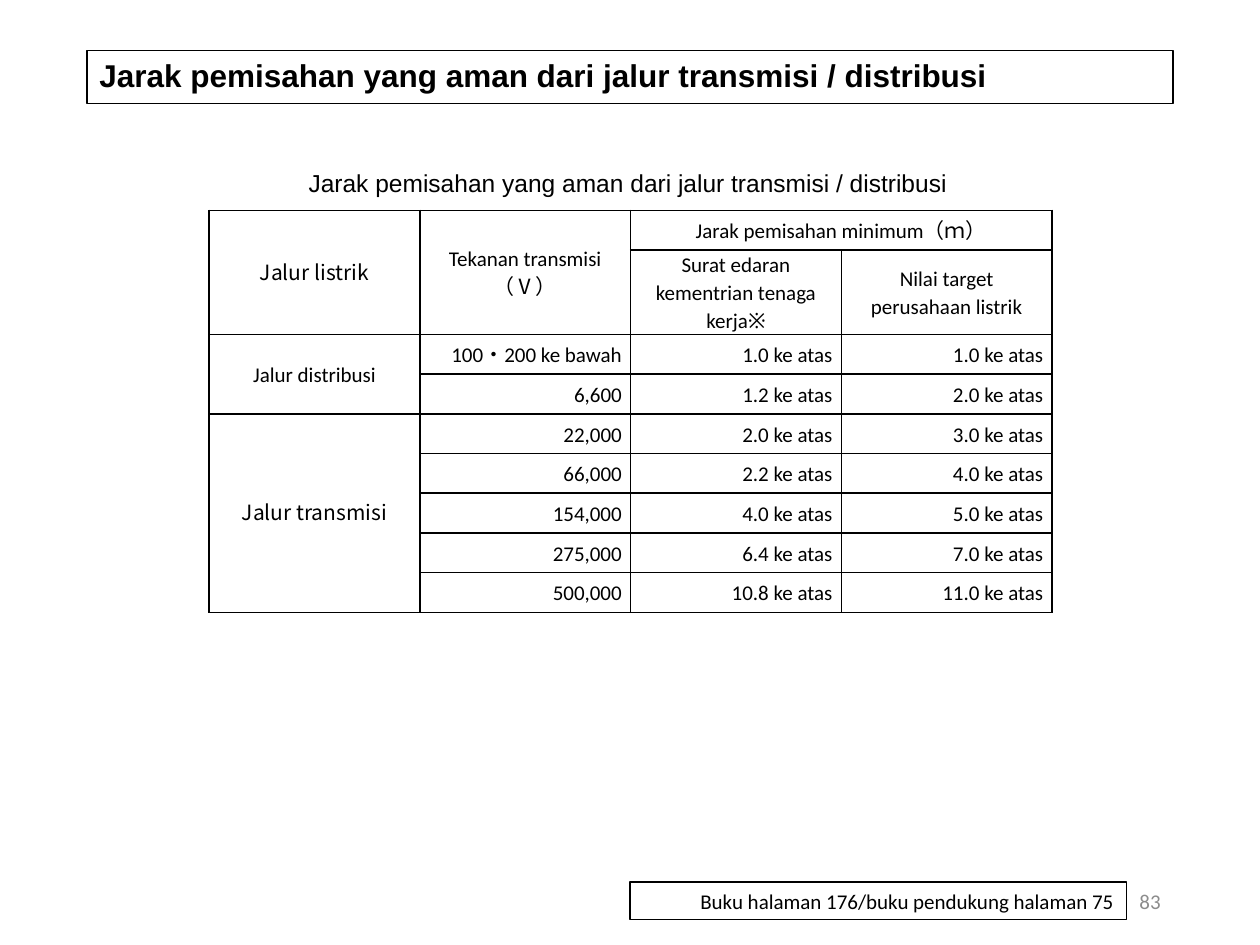
"""Build a slide with a table of safe distances from power lines."""
from lxml import etree
from pptx import Presentation
from pptx import util as u
from pptx.dml.color import RGBColor
from pptx.enum import text as t
from pptx.oxml.ns import qn

COLORS = {"ink": "000000", "number": "8C8C8C"}
HEADING = "Jarak pemisahan yang aman dari jalur transmisi / distribusi"
CJK = "Noto Sans CJK JP"
LEFT, CENTER, RIGHT = t.PP_ALIGN.LEFT, t.PP_ALIGN.CENTER, t.PP_ALIGN.RIGHT

BOXES = [
    {"text": HEADING, "at": (0.69, 0.4, 8.62, 0.42), "size": 18, "font": "Arial",
     "bold": True, "border": True, "spacing": 0.9},
    {"text": "Buku halaman 176/buku pendukung halaman 75", "at": (5, 7, 3.94, 0.3),
     "align": RIGHT, "border": True},
    {"text": "83", "at": (7.06, 6.95, 2.25, 0.4), "align": RIGHT, "color": "number"},
    {"text": HEADING, "at": (2.35, 1.28, 5.29, 0.34), "size": 14, "font": "Arial",
     "wrap": False},
]

ROWS = [
    ("Jalur listrik", "Tekanan transmisi（Ⅴ）", "Jarak pemisahan minimum（ｍ）", ""),
    ("", "", "Surat edaran kementrian tenaga kerja※", "Nilai target perusahaan listrik"),
    ("Jalur distribusi", "100・200 ke bawah", "1.0 ke atas", "1.0 ke atas"),
    ("", "6,600", "1.2 ke atas", "2.0 ke atas"),
    ("Jalur transmisi", "22,000", "2.0 ke atas", "3.0 ke atas"),
    ("", "66,000", "2.2 ke atas", "4.0 ke atas"),
    ("", "154,000", "4.0 ke atas", "5.0 ke atas"),
    ("", "275,000", "6.4 ke atas", "7.0 ke atas"),
    ("", "500,000", "10.8 ke atas", "11.0 ke atas"),
]
MERGES = [((0, 0), (1, 0)), ((0, 1), (1, 1)), ((0, 2), (0, 3)),
          ((2, 0), (3, 0)), ((4, 0), (8, 0))]
CJK_CELLS = {"Jalur listrik", "Jalur transmisi"}
HEADER_ROWS = 2
TABLE_AT = (1.66, 1.67, 6.69, 3.19)
SUBHEADER_HEIGHT = 0.67


def set_all(target, values):
    for name, value in values.items():
        setattr(target, name, value)


def write(paragraph, words, size=12, font="Calibri", color="ink", bold=False,
          align=LEFT, spacing=None):
    run = paragraph.add_run()
    run.text = words
    set_all(run.font, {"size": u.Pt(size), "name": font, "bold": bold})
    run.font.color.rgb = RGBColor.from_string(COLORS[color])
    set_all(paragraph, {"alignment": align, "line_spacing": spacing})


def add_box(slide, box):
    style = dict(box)
    words, at = style.pop("text"), style.pop("at")
    border, wrap = style.pop("border", False), style.pop("wrap", True)
    shape = slide.shapes.add_textbox(*map(u.Inches, at))
    if border:
        shape.line.color.rgb = RGBColor.from_string(COLORS["ink"])
        shape.line.width = u.Pt(0.75)
    set_all(shape.text_frame, {"word_wrap": wrap, "vertical_anchor": t.MSO_ANCHOR.MIDDLE})
    write(shape.text_frame.paragraphs[0], words, **style)


def add_borders(cell):
    properties = cell._tc.get_or_add_tcPr()
    for index, side in enumerate(("lnL", "lnR", "lnT", "lnB")):
        line = etree.Element(qn(f"a:{side}"), w=str(u.Pt(1)))
        fill = etree.SubElement(line, qn("a:solidFill"))
        etree.SubElement(fill, qn("a:srgbClr"), val=COLORS["ink"])
        properties.insert(index, line)


def add_distance_table(slide):
    left, top, width, height = TABLE_AT
    columns = len(ROWS[0])
    table = slide.shapes.add_table(len(ROWS), columns, *map(u.Inches, TABLE_AT)).table
    set_all(table, {"first_row": False, "horz_banding": False})
    for column in table.columns:
        column.width = u.Inches(width / columns)
    for index, row in enumerate(table.rows):
        regular = (height - SUBHEADER_HEIGHT) / (len(ROWS) - 1)
        row.height = u.Inches(SUBHEADER_HEIGHT if index == 1 else regular)
    for start, end in MERGES:
        table.cell(*start).merge(table.cell(*end))
    for row, values in enumerate(ROWS):
        for column, words in enumerate(values):
            cell = table.cell(row, column)
            cell.fill.background()
            add_borders(cell)
            set_all(cell, {"margin_left": u.Inches(0.07), "margin_right": u.Inches(0.07),
                           "margin_top": 0, "margin_bottom": 0,
                           "vertical_anchor": t.MSO_ANCHOR.MIDDLE})
            if words:
                centered = row < HEADER_ROWS or column == 0
                write(cell.text_frame.paragraphs[0], words,
                      font=CJK if words in CJK_CELLS else "Calibri",
                      align=CENTER if centered else RIGHT, spacing=u.Pt(16))


def main():
    presentation = Presentation()
    set_all(presentation, {"slide_width": u.Inches(10), "slide_height": u.Inches(7.5)})
    slide = presentation.slides.add_slide(presentation.slide_layouts[6])
    for box in BOXES:
        add_box(slide, box)
    add_distance_table(slide)
    presentation.save("out.pptx")


if __name__ == "__main__":
    main()
